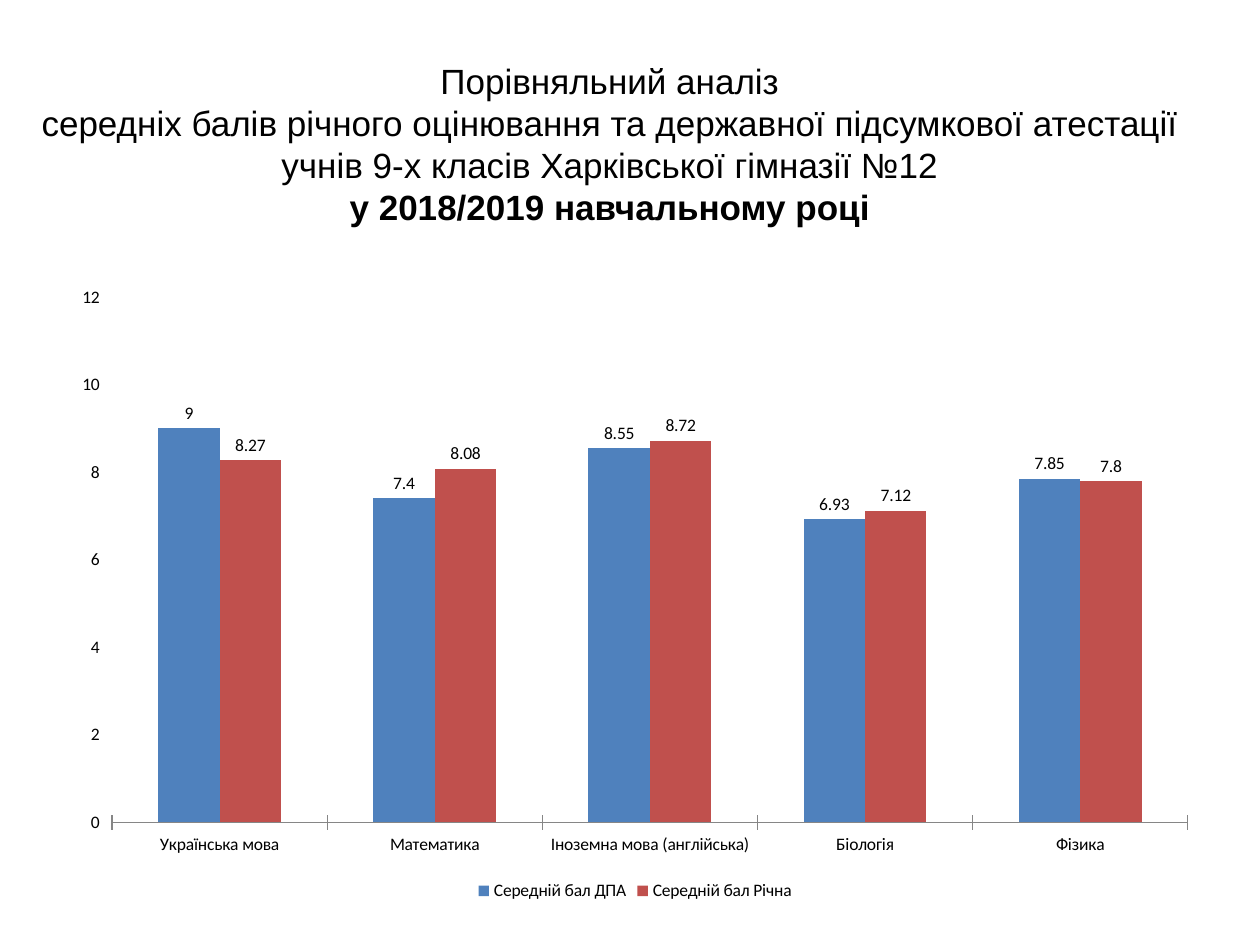
from dataclasses import dataclass

from pptx import Presentation
from pptx.chart.chart import Chart
from pptx.chart.data import CategoryChartData
from pptx.dml.color import RGBColor
from pptx.enum.chart import (
    XL_CHART_TYPE, XL_LABEL_POSITION, XL_LEGEND_POSITION, XL_TICK_MARK)
from pptx.enum.text import MSO_ANCHOR, PP_ALIGN
from pptx.oxml import parse_xml
from pptx.oxml.ns import nsdecls
from pptx.util import Inches, Pt

CLUSTERED = XL_CHART_TYPE.COLUMN_CLUSTERED
OUTSIDE_END = XL_LABEL_POSITION.OUTSIDE_END
BOTTOM = XL_LEGEND_POSITION.BOTTOM
CROSS = XL_TICK_MARK.CROSS
TOP = MSO_ANCHOR.TOP
CENTER = PP_ALIGN.CENTER

BLACK = RGBColor(0x00, 0x00, 0x00)
WHITE = RGBColor(0xFF, 0xFF, 0xFF)
GRAY = RGBColor(0x86, 0x86, 0x86)
BLUE = RGBColor(0x4F, 0x81, 0xBD)
RED = RGBColor(0xC0, 0x50, 0x4D)


@dataclass
class TitleLine:
    text: str
    bold: bool = False


@dataclass
class ScoreSeries:
    name: str
    scores: list[float]
    color: RGBColor


TITLE_LINES = [
    TitleLine("Порівняльний аналіз"),
    TitleLine("середніх балів річного оцінювання та державної підсумкової атестації"),
    TitleLine("учнів 9-х класів Харківської гімназії №12"),
    TitleLine("у 2018/2019 навчальному році", bold=True),
]
SUBJECTS = ["Українська мова", "Математика", "Іноземна мова (англійська)",
            "Біологія", "Фізика"]
SCORE_SERIES = [
    ScoreSeries("Середній бал ДПА", [9, 7.4, 8.55, 6.93, 7.85], BLUE),
    ScoreSeries("Середній бал Річна", [8.27, 8.08, 8.72, 7.12, 7.8], RED),
]
TITLE_FONT = {"name": "Arial", "size": Pt(20)}
CHART_FONT = {"name": "Calibri", "size": Pt(10)}
TITLE_BOX = {"left": Inches(0.2), "top": Inches(0.42),
             "width": Inches(9.28), "height": Inches(1.75)}
TITLE_FRAME = {"word_wrap": False, "vertical_anchor": TOP}
VALUE_AXIS = {"minimum_scale": 0, "maximum_scale": 12, "major_unit": 2,
              "major_tick_mark": CROSS, "has_major_gridlines": True}


def set_attributes(target: object, values: dict) -> None:
    for name, value in values.items():
        setattr(target, name, value)


def fill_title(title, lines: list[TitleLine]) -> None:
    set_attributes(title, TITLE_BOX)
    frame = title.text_frame
    set_attributes(frame, TITLE_FRAME)
    for index, line in enumerate(lines):
        paragraph = frame.add_paragraph() if index else frame.paragraphs[0]
        paragraph.alignment = CENTER
        run = paragraph.add_run()
        run.text = line.text
        set_attributes(run.font, TITLE_FONT | {"bold": line.bold})
        run.font.color.rgb = BLACK


def add_score_chart(slide) -> Chart:
    data = CategoryChartData()
    data.categories = SUBJECTS
    for series in SCORE_SERIES:
        data.add_series(series.name, series.scores)
    chart = slide.shapes.add_chart(
        CLUSTERED, Inches(0.47), Inches(2.18), Inches(9.14), Inches(5.01), data).chart
    set_attributes(chart, {"has_title": False, "has_legend": True})
    set_attributes(chart.font, CHART_FONT)
    chart.font.color.rgb = BLACK
    set_attributes(chart.legend, {"position": BOTTOM, "include_in_layout": False})
    return chart


def format_plot(chart: Chart) -> None:
    plot = chart.plots[0]
    set_attributes(plot, {"gap_width": 150, "overlap": 0, "vary_by_categories": False})
    for drawn, series in zip(plot.series, SCORE_SERIES):
        drawn.format.fill.solid()
        drawn.format.fill.fore_color.rgb = series.color
        set_attributes(drawn.data_labels, {"show_value": True, "position": OUTSIDE_END})
    # python-pptx has no public plot-area fill
    chart.plots[0]._element.getparent().append(parse_xml(
        f'<c:spPr {nsdecls("c", "a")}><a:solidFill><a:srgbClr val="{WHITE}"/>'
        '</a:solidFill></c:spPr>'))


def format_axes(chart: Chart) -> None:
    set_attributes(chart.value_axis, VALUE_AXIS)
    chart.value_axis.format.line.fill.background()
    chart.category_axis.major_tick_mark = CROSS
    gridlines = chart.value_axis.major_gridlines
    for element, color in ((gridlines, WHITE), (chart.category_axis, GRAY)):
        element.format.line.width = Pt(0.75)
        element.format.line.color.rgb = color


def main() -> None:
    presentation = Presentation()
    set_attributes(presentation, {"slide_width": Inches(10), "slide_height": Inches(7.5)})
    slide = presentation.slides.add_slide(
        presentation.slide_layouts.get_by_name("Title Only"))
    fill_title(slide.shapes.title, TITLE_LINES)
    chart = add_score_chart(slide)
    format_plot(chart)
    format_axes(chart)
    presentation.save("out.pptx")


if __name__ == "__main__":
    main()
